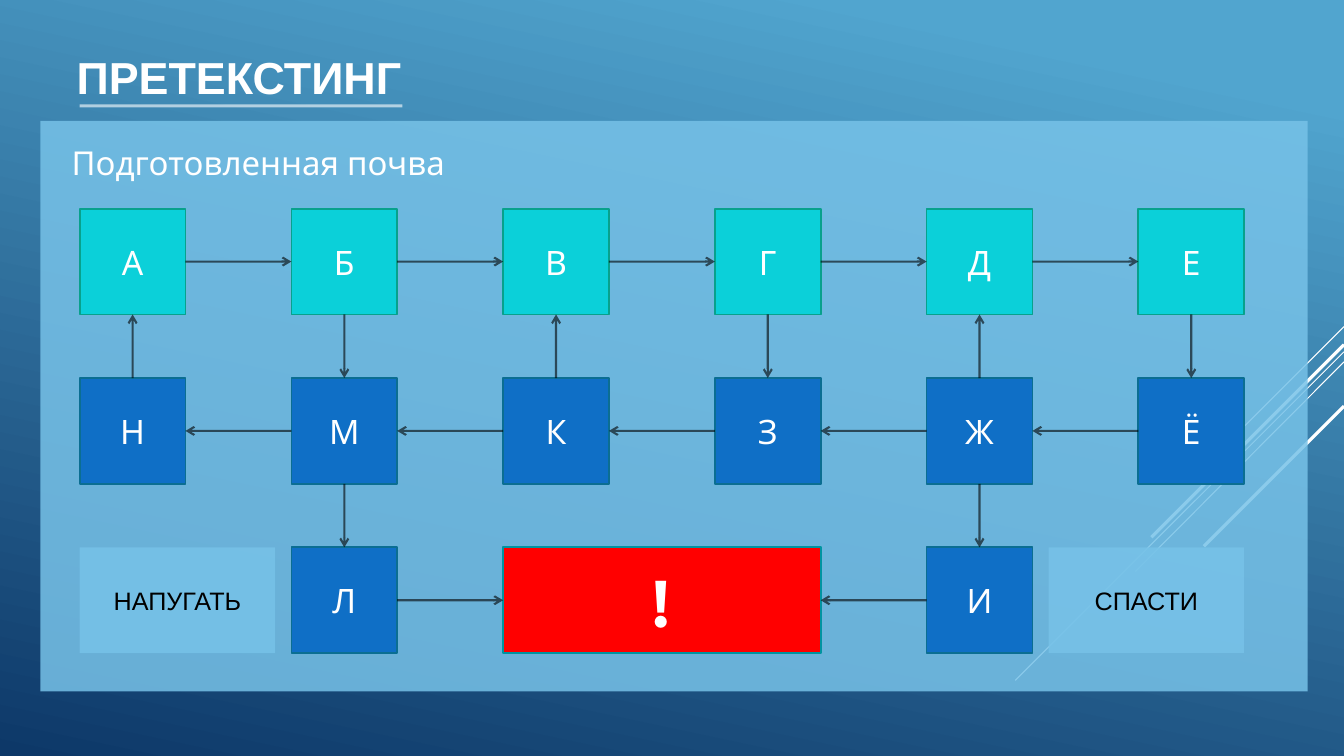
import pptx
import pptx.util
import pptx.dml.color
import pptx.enum.shapes
import pptx.enum.text
import pptx.oxml
import pptx.oxml.ns

RGBColor = pptx.dml.color.RGBColor
WHITE = RGBColor(0xFF, 0xFF, 0xFF)
BLACK = RGBColor(0x00, 0x00, 0x00)
RED = RGBColor(0xFF, 0x00, 0x00)
SKY = RGBColor(0x51, 0xA5, 0xCF)
NAVY = RGBColor(0x0D, 0x38, 0x68)
PALE = RGBColor(0x77, 0xC2, 0xE8)
CYAN = RGBColor(0x0B, 0xD0, 0xD9)
CYAN_EDGE = RGBColor(0x08, 0xA1, 0x8C)
BLUE = RGBColor(0x0F, 0x6F, 0xC6)
BLUE_EDGE = RGBColor(0x0B, 0x6E, 0x92)
TEAL_EDGE = RGBColor(0x00, 0x94, 0xA1)

Inches = pptx.util.Inches
Pt = pptx.util.Pt
ALIGN = pptx.enum.text.PP_ALIGN
MIDDLE = pptx.enum.text.MSO_ANCHOR.MIDDLE
RECTANGLE = pptx.enum.shapes.MSO_SHAPE.RECTANGLE
STRAIGHT = pptx.enum.shapes.MSO_CONNECTOR.STRAIGHT
SubElement = pptx.oxml.ns.qn

LEFT, TOP, SIZE = 0.79, 2.07, 1.05
COLUMN_STEP, ROW_STEP = 2 * SIZE, 1.68
COLUMNS = [LEFT + COLUMN_STEP * index for index in range(6)]
ROWS = [TOP + ROW_STEP * index for index in range(3)]
HALF = SIZE / 2

presentation = pptx.Presentation()
presentation.slide_width = Inches(13.33)
presentation.slide_height = Inches(7.5)
slide = presentation.slides.add_slide(presentation.slide_layouts[1])

background = slide.background.fill
background.gradient()
background.gradient_angle = 258
for stop, color, position in zip(background.gradient_stops, (SKY, NAVY), (0.1, 1)):
    stop.color.rgb = color
    stop.position = position


def add_line(start, end, color, width, opacity=100, arrow=False):
    line = slide.shapes.add_connector(STRAIGHT, *[Inches(value) for value in (*start, *end)])
    line.line.color.rgb = color
    line.line.width = Pt(width)
    properties = line._element.spPr
    if opacity < 100:
        color_element = properties.find(".//" + pptx.oxml.ns.qn("a:srgbClr"))
        color_element.append(pptx.oxml.parse_xml(
            f'<a:alpha {pptx.oxml.ns.nsdecls("a")} val="{opacity * 1000}"/>'))
    if arrow:
        line.line._get_or_add_ln().append(pptx.oxml.parse_xml(
            f'<a:tailEnd {pptx.oxml.ns.nsdecls("a")} type="arrow"/>'))
    properties.append(pptx.oxml.parse_xml(f'<a:effectLst {pptx.oxml.ns.nsdecls("a")}/>'))


def add_box(left, top, width, height, fill, edge=None, text="", **font_format):
    box = slide.shapes.add_shape(RECTANGLE, *[Inches(value) for value in (left, top, width, height)])
    box.shadow.inherit = False
    box.fill.solid()
    box.fill.fore_color.rgb = fill
    if edge is None:
        box.line.fill.background()
        box._element.spPr.find(".//" + pptx.oxml.ns.qn("a:srgbClr")).append(
            pptx.oxml.parse_xml(f'<a:alpha {pptx.oxml.ns.nsdecls("a")} val="85000"/>'))
    else:
        box.line.color.rgb = edge
        box.line.width = Pt(1.25)
    if text:
        box.text_frame.vertical_anchor = MIDDLE
        paragraph = box.text_frame.paragraphs[0]
        paragraph.alignment = ALIGN.CENTER
        run = paragraph.add_run()
        run.text = text
        run.font.color.rgb = font_format.pop("color", WHITE)
        for name, value in ({"name": "League Spartan", "size": Pt(24)} | font_format).items():
            setattr(run.font, name, value)
    return box


for right_y, end, width in [
    (3.24, (12.33, 4.24), 0.75),
    (3.49, (10.07, 6.75), 0.75),
    (3.59, (11.26, 5.67), 0.75),
    (3.42, (11.42, 5.33), 2.25),
    (4.03, (11.94, 5.42), 2.25),
]:
    add_line((13.33, right_y), end, WHITE, width)

add_line((LEFT, 1.05), (3.99, 1.05), WHITE, 2.25, opacity=60)
panel = add_box(0.4, 1.2, 12.57, 5.66, PALE)

title, body = slide.placeholders
panel._element.addnext(body._element)
for placeholder, text, place, font_format in [
    (title, "ПРЕТЕКСТИНГ", (0.66, 0.46, 6.8, 0.59), {"name": "Arial", "size": Pt(32), "bold": True}),
    (body, "Подготовленная почва", (0.58, 1.34, 12.14, 0.44), {"name": "League Spartan", "size": Pt(23.5)}),
]:
    for name, value in zip(("left", "top", "width", "height"), place):
        setattr(placeholder, name, Inches(value))
    frame = placeholder.text_frame
    frame.auto_size = pptx.enum.text.MSO_AUTO_SIZE.NONE
    paragraph = frame.paragraphs[0]
    paragraph.alignment = ALIGN.LEFT
    run = paragraph.add_run()
    run.text = text
    run.font.color.rgb = WHITE
    for name, value in font_format.items():
        setattr(run.font, name, value)

title.text_frame.vertical_anchor = MIDDLE
for side, inset in {"left": 0.13, "top": 0.07, "right": 0.13, "bottom": 0.07}.items():
    setattr(body.text_frame, f"margin_{side}", Inches(inset))
body_properties = body.text_frame.paragraphs[0]._p.get_or_add_pPr()
body_properties.set("marL", str(Inches(0.5)))
body_properties.set("indent", str(-Inches(0.5)))
body_properties.append(pptx.oxml.parse_xml(f'<a:buNone {pptx.oxml.ns.nsdecls("a")}/>'))

for letters, top, fill, edge in [
    ("АБВГДЕ", ROWS[0], CYAN, CYAN_EDGE),
    ("НМКЗЖЁ", ROWS[1], BLUE, BLUE_EDGE),
    (" Л  И ", ROWS[2], BLUE, BLUE_EDGE),
]:
    for letter, left in zip(letters, COLUMNS):
        if letter != " ":
            add_box(left, top, SIZE, SIZE, fill, edge, letter)

add_box(COLUMNS[2], ROWS[2], 3 * SIZE, SIZE, RED, TEAL_EDGE, "!", size=Pt(48), bold=True)
for text, left in [("НАПУГАТЬ", LEFT), ("СПАСТИ", 10.4)]:
    add_box(left, ROWS[2], 1.94, SIZE, PALE, None, text, name="Arial", size=Pt(18), color=BLACK)

arrows = []
for left, following in zip(COLUMNS, COLUMNS[1:]):
    arrows.append(((left + SIZE, ROWS[0] + HALF), (following, ROWS[0] + HALF)))
    arrows.append(((following, ROWS[1] + HALF), (left + SIZE, ROWS[1] + HALF)))
for index, left in enumerate(COLUMNS):
    ends = [(left + HALF, ROWS[0] + SIZE), (left + HALF, ROWS[1])]
    arrows.append(ends if index % 2 else ends[::-1])
for left in (COLUMNS[1], COLUMNS[4]):
    arrows.append(((left + HALF, ROWS[1] + SIZE), (left + HALF, ROWS[2])))
arrows.append(((COLUMNS[1] + SIZE, ROWS[2] + HALF), (COLUMNS[2], ROWS[2] + HALF)))
arrows.append(((COLUMNS[4], ROWS[2] + HALF), (COLUMNS[3] + SIZE, ROWS[2] + HALF)))
for start, end in arrows:
    add_line(start, end, BLACK, 1.5, opacity=60, arrow=True)

presentation.save("out.pptx")
